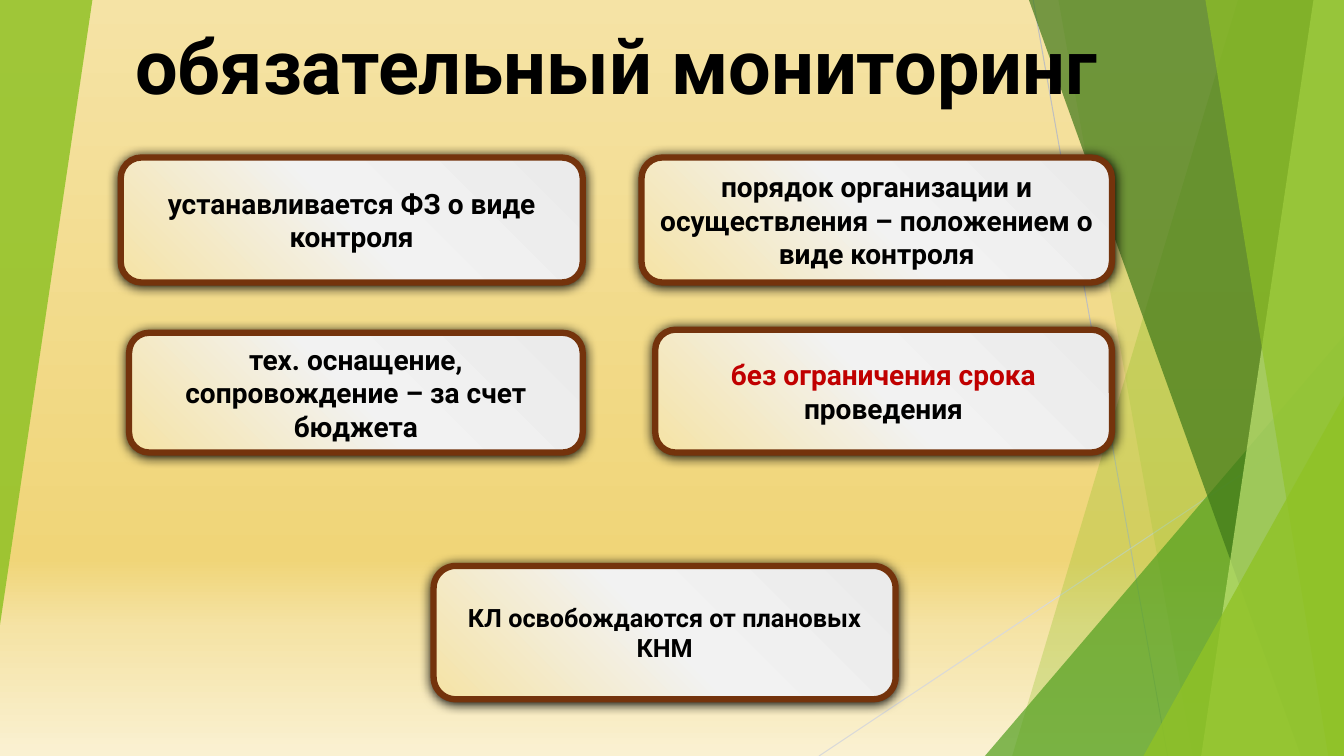
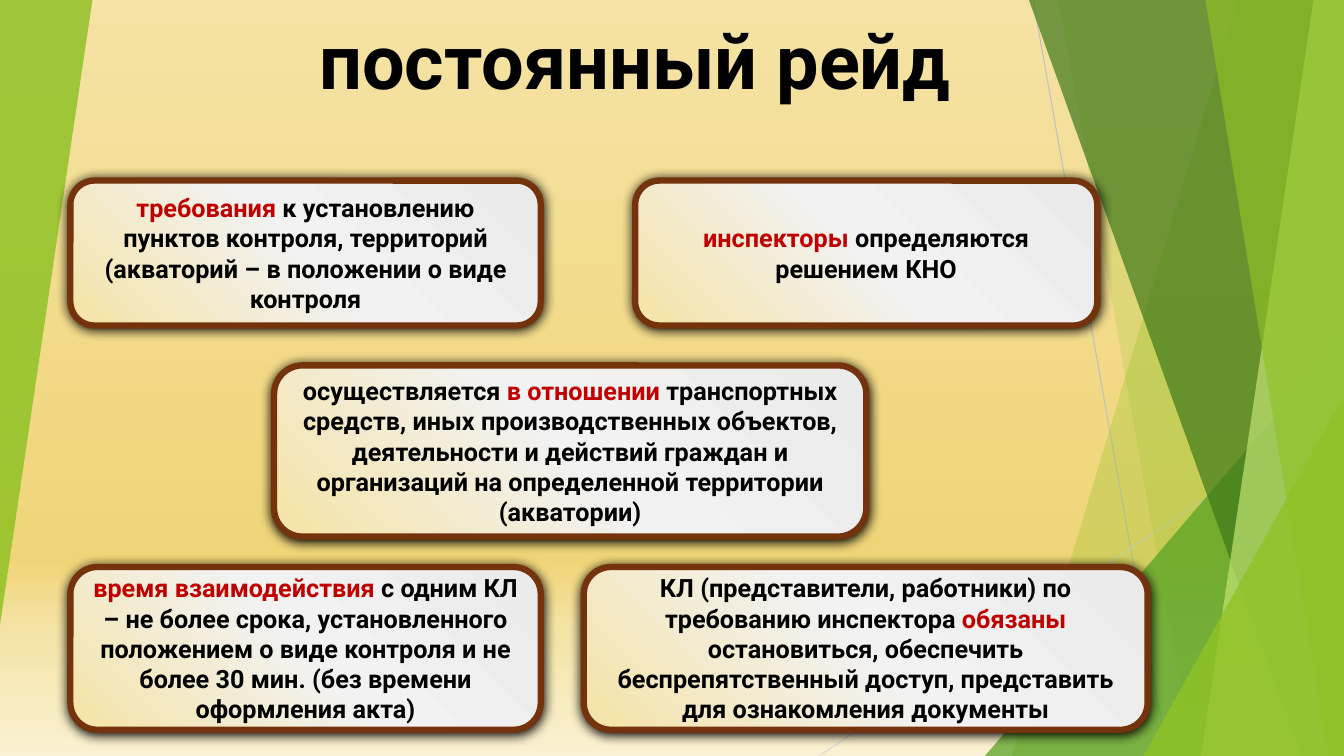
from lxml import etree
from pptx import Presentation
from pptx.dml.color import RGBColor
from pptx.enum.shapes import MSO_CONNECTOR, MSO_SHAPE
from pptx.enum.text import MSO_ANCHOR, PP_ALIGN
from pptx.oxml.ns import qn
from pptx.util import Emu, Pt

PX = 9525  # EMU in one px
W, H = 1280, 720
FONT = "Roboto"
BLACK, RED, BROWN = "000000", "C00000", "74330C"
LIME, GREEN, FOREST, PALE = "90C226", "54A021", "3F7819", "C0E474"
BACKDROP = [(0, "F5E3A5"), (74, "F0D578"), (83, "F5E3A5"), (100, "FAF1D2")]
CARD_FILL = [(0, "EBEBEB"), (50, "F2F2F2"), (100, "F5E3A5")]

# Bands run to the right edge: x at top, x at bottom, colour, opacity
BACK_BANDS = [(1179, 964, LIME, 30), (1008, 1136, LIME, 20)]
FRONT_BANDS = [(980, 1239, FOREST, 70), (1251, 1144, PALE, 70),
               (1148, 1265, LIME, 65)]
# Thin lines: start, end, colour
RULES = [((984, 0), (1112, H), "BFBFBF"), ((W, 387), (780, H), "D9D9D9")]


def px(*values):
    return [Emu(v * PX) for v in values]


def rgb(value):
    return RGBColor.from_string(value)


def add_xml(parent, tag, **attrs):
    return etree.SubElement(parent, qn(tag), {k: str(v) for k, v in attrs.items()})


def set_gradient(parent, fill, stops, angle):
    """Give the element that holds a fill a linear gradient."""
    fill.solid()
    solid = parent.find(qn("a:solidFill"))
    grad = etree.Element(qn("a:gradFill"), rotWithShape="1")
    stop_list = add_xml(grad, "a:gsLst")
    for pos, colour in stops:
        stop = add_xml(stop_list, "a:gs", pos=pos * 1000)
        add_xml(stop, "a:srgbClr", val=colour)
    add_xml(grad, "a:lin", ang=angle * 60000, scaled=0)
    parent.replace(solid, grad)


def paint(sp, colour, opacity):
    """Fill a shape with a translucent colour, without outline or shadow."""
    sp.fill.solid()
    sp.fill.fore_color.rgb = rgb(colour)
    clr = sp.element.spPr.find(qn("a:solidFill")).find(qn("a:srgbClr"))
    add_xml(clr, "a:alpha", val=opacity * 1000)
    sp.line.fill.background()
    sp.shadow.inherit = False


def write(sp, text, size, anchor):
    """Write centred bold text; parts between asterisks are red."""
    tf = sp.text_frame
    tf.word_wrap = True
    tf.vertical_anchor = anchor
    p = tf.paragraphs[0]
    p.alignment = PP_ALIGN.CENTER
    p.font.name, p.font.size, p.font.bold = FONT, Pt(size), True
    for i, part in enumerate(text.split("*")):
        if part:
            r = p.add_run()
            r.text = part
            r.font.color.rgb = rgb(RED if i % 2 else BLACK)


def add_band(s, top_x, bottom_x, colour, opacity):
    builder = s.shapes.build_freeform(top_x, 0, scale=PX)
    builder.add_line_segments([(W, 0), (W, H), (bottom_x, H)])
    paint(builder.convert_to_shape(), colour, opacity)


def add_wedge(s, box, colour, opacity, rotation=0):
    sp = s.shapes.add_shape(MSO_SHAPE.ISOSCELES_TRIANGLE, *px(*box))
    sp.adjustments[0] = 1
    sp.rotation = rotation
    paint(sp, colour, opacity)


def add_decor(s):
    """Draw the backdrop that every slide shares."""
    background_fill = s.background.fill
    background_fill.solid()
    bg = s.element.find(".//" + qn("p:bgPr"))
    set_gradient(bg, background_fill, BACKDROP, 90)
    for start, end, colour in RULES:
        line = s.shapes.add_connector(MSO_CONNECTOR.STRAIGHT, *px(*start, *end))
        line.line.color.rgb = rgb(colour)
        line.line.width = Pt(0.75)
        add_xml(line.element.spPr, "a:effectLst")
    for band in BACK_BANDS:
        add_band(s, *band)
    add_wedge(s, (938, 320, 342, 400), GREEN, 72)
    for band in FRONT_BANDS:
        add_band(s, *band)
    add_wedge(s, (1089, 377, 191, 343), LIME, 80)
    add_wedge(s, (0, 0, 88, 595), LIME, 85, rotation=180)


def add_title(s, box, text):
    write(s.shapes.add_textbox(*px(*box)), text, 54, MSO_ANCHOR.BOTTOM)


def add_card(s, box, text, size):
    sp = s.shapes.add_shape(MSO_SHAPE.ROUNDED_RECTANGLE, *px(*box))
    set_gradient(sp.element.spPr, sp.fill, CARD_FILL, 135)
    sp.line.color.rgb = rgb(BROWN)
    sp.line.width = Pt(4.5)
    # Soft shadow just below the card
    sp.shadow.inherit = False
    effects = sp.element.spPr.find(qn("a:effectLst"))
    shadow = add_xml(effects, "a:outerShdw", blurRad=Pt(8.5), dist=Pt(1),
                     dir=90 * 60000, algn="t", rotWithShape=0)
    add_xml(shadow, "a:srgbClr", val=BLACK)
    write(sp, text, size, MSO_ANCHOR.MIDDLE)


def add_card_slide(prs, title_box, title, cards):
    s = prs.slides.add_slide(prs.slide_layouts[6])
    add_decor(s)
    add_title(s, title_box, title)
    for card in cards:
        add_card(s, *card)


# Cards: box, text, text size
MONITORING = [
    ((115, 150, 440, 119), "устанавливается ФЗ о виде контроля", 20),
    ((611, 150, 448, 119),
     "порядок организации и осуществления – положением о виде контроля", 20),
    ((123, 317, 432, 114),
     "тех. оснащение, сопровождение – за счет бюджета", 20),
    ((624, 314, 435, 117), "*без ограничения срока *проведения", 20),
    ((413, 539, 440, 127), "КЛ освобождаются от плановых КНМ", 18),
]
RAID = [
    ((67, 172, 448, 138),
     "*требования* к установлению пунктов контроля, территорий "
     "(акваторий – в положении о виде контроля", 18),
    ((605, 172, 440, 138), "*инспекторы* определяются решением КНО", 18),
    ((261, 348, 564, 163),
     "осуществляется *в отношении *транспортных средств, иных "
     "производственных объектов, деятельности и действий граждан и "
     "организаций на определенной территории (акватории)", 18),
    ((67, 540, 448, 155),
     "*время взаимодействия *с одним КЛ – не более срока, установленного "
     "положением о виде контроля и не более 30 мин. (без времени "
     "оформления акта)", 18),
    ((556, 540, 537, 155),
     "КЛ (представители, работники) по требованию инспектора *обязаны* "
     "остановиться, обеспечить беспрепятственный доступ, представить для "
     "ознакомления документы", 18),
]


def main():
    prs = Presentation()
    prs.slide_width, prs.slide_height = px(W, H)
    add_card_slide(prs, (30, 17, 1114, 92), "обязательный мониторинг", MONITORING)
    add_card_slide(prs, (48, 17, 1114, 87), "постоянный рейд", RAID)
    prs.save("out.pptx")


if __name__ == "__main__":
    main()
